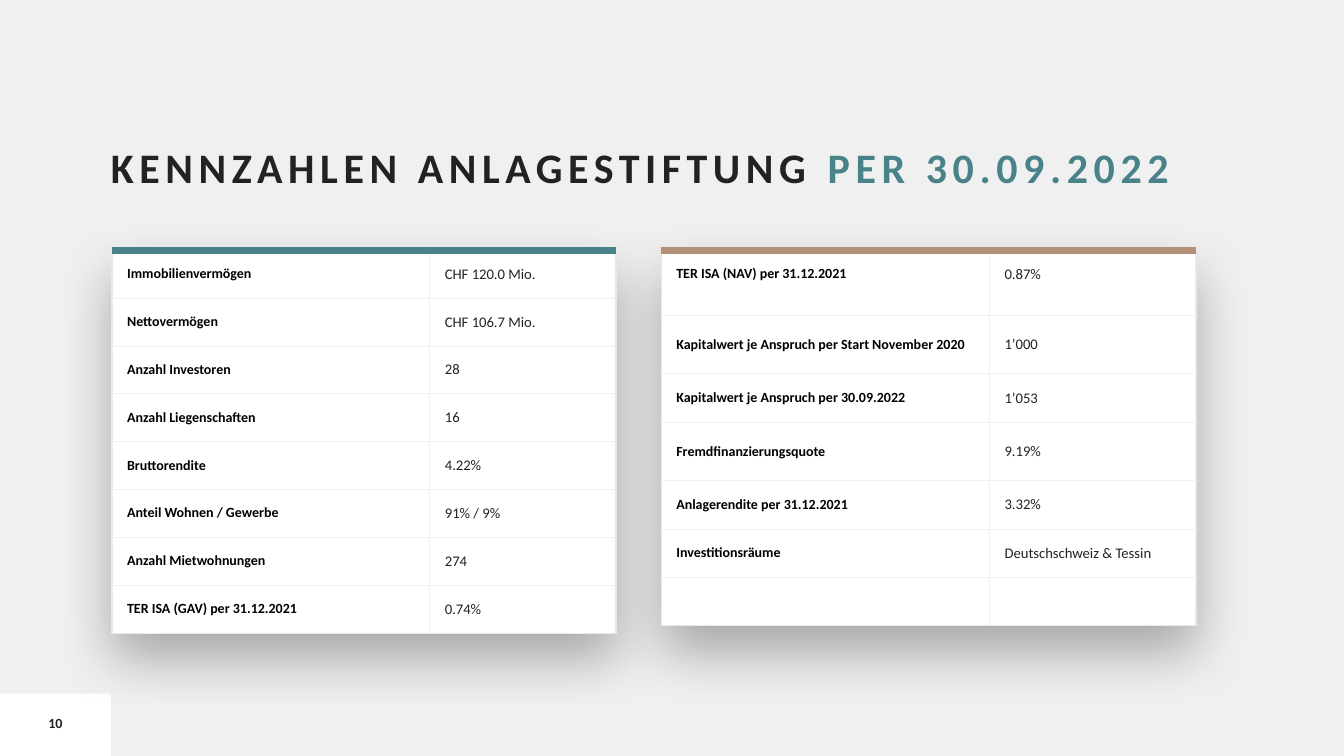
import pptx
import pptx.dml.color
import pptx.enum.shapes
import pptx.enum.text
import pptx.oxml
import pptx.oxml.ns
import pptx.util

Pt = pptx.util.Pt
ALIGN = pptx.enum.text.PP_ALIGN
ANCHOR = pptx.enum.text.MSO_ANCHOR

COLORS = {
    "background": "F0F0F0", "panel": "FFFFFF", "text": "222222", "label": "000000",
    "teal": "498289", "sand": "B39178", "outer": "E9E9E9", "inner": "F0F0F0",
    "shadow": "000000",
}
FONT = "Calibri"
TITLE = [("KENNZAHLEN ANLAGESTIFTUNG", "text"), (" PER 30.09.2022", "teal")]
PAGE = "10"
TABLE_TOP = 178.6
TABLES = [
    {
        "left": 80, "columns": [227, 133], "accent": "teal", "heights": [34.2] * 8,
        "label_anchor": ANCHOR.TOP, "value_anchor": ANCHOR.TOP,
        "rows": [
            ("Immobilienvermögen", "CHF 120.0 Mio."),
            ("Nettovermögen", "CHF 106.7 Mio."),
            ("Anzahl Investoren", "28"),
            ("Anzahl Liegenschaften", "16"),
            ("Bruttorendite", "4.22%"),
            ("Anteil Wohnen / Gewerbe", "91% / 9%"),
            ("Anzahl Mietwohnungen", "274"),
            ("TER ISA (GAV) per 31.12.2021", "0.74%"),
        ],
    },
    {
        "left": 472.3, "columns": [234.5, 147.5], "accent": "sand",
        "heights": [46.8, 41.6, 34.6, 41.6, 34.6, 34.6, 34.6],
        "label_anchor": ANCHOR.MIDDLE, "value_anchor": ANCHOR.MIDDLE,
        "rows": [
            ("TER ISA (NAV) per 31.12.2021", "0.87%"),
            ("Kapitalwert je Anspruch per Start November 2020", "1’000"),
            ("Kapitalwert je Anspruch per 30.09.2022", "1’053"),
            ("Fremdfinanzierungsquote", "9.19%"),
            ("Anlagerendite per 31.12.2021", "3.32%"),
            ("Investitionsräume", "Deutschschweiz & Tessin"),
            ("", ""),
        ],
    },
]


def rgb(name):
    return pptx.dml.color.RGBColor.from_string(COLORS[name])


def xml(text):
    return pptx.oxml.parse_xml(text.replace(">", " " + pptx.oxml.ns.nsdecls("a") + ">", 1))


def add_text(p, text, size=10, color="text", bold=False, spacing=0):
    r = p.add_run()
    r.text = text
    r.font.name = FONT
    r.font.size = Pt(size)
    r.font.bold = bold
    r.font.color.rgb = rgb(color)
    if spacing:
        r.font._element.set("spc", str(spacing * 100))


def set_borders(cell, outer_sides):
    """Draw 1 pt lines on the table's outer sides and 0.5 pt lines elsewhere."""
    tc_pr = cell._tc.get_or_add_tcPr()
    for side in "LRTB":
        name, width = ("outer", 1) if side in outer_sides else ("inner", 0.5)
        tc_pr.append(xml(
            f'<a:ln{side} w="{Pt(width)}"><a:solidFill><a:srgbClr val="{COLORS[name]}"/>'
            f'</a:solidFill></a:ln{side}>'))


def add_shadow(table):
    table._tbl.tblPr.insert(0, xml(
        f'<a:effectLst><a:outerShdw blurRad="{Pt(40)}" dist="{Pt(18)}" dir="5400000" '
        f'rotWithShape="0"><a:srgbClr val="{COLORS["shadow"]}"><a:alpha val="30000"/>'
        '</a:srgbClr></a:outerShdw></a:effectLst>'))


def add_figures(s, spec_table):
    rows, columns = spec_table["rows"], spec_table["columns"]
    heights = spec_table["heights"]
    table = s.shapes.add_table(
        len(rows), len(columns), Pt(spec_table["left"]), Pt(TABLE_TOP),
        Pt(sum(columns)), Pt(sum(heights))).table
    table.first_row = table.horz_banding = False
    add_shadow(table)
    for column, width in zip(table.columns, columns):
        column.width = Pt(width)
    for i, (row, height) in enumerate(zip(rows, heights)):
        table.rows[i].height = Pt(height)
        for j, text in enumerate(row):
            cell = table.cell(i, j)
            sides = "LR"[j] + ("T" if i == 0 else "") + ("B" if i == len(rows) - 1 else "")
            set_borders(cell, sides)
            cell.fill.solid()
            cell.fill.fore_color.rgb = rgb("panel")
            if not text:
                continue
            cell.margin_left = cell.margin_right = Pt(10.8)
            cell.margin_top = cell.margin_bottom = Pt(10.8)
            anchor = spec_table["value_anchor" if j else "label_anchor"]
            cell.vertical_anchor = ANCHOR.TOP if i == 0 else anchor
            p = cell.text_frame.paragraphs[0]
            if j:
                add_text(p, text, size=10.5)
            else:
                add_text(p, text, color="label", bold=True)


def add_accent(s, left, width, color):
    line = s.shapes.add_connector(
        pptx.enum.shapes.MSO_CONNECTOR.STRAIGHT,
        Pt(left), Pt(TABLE_TOP), Pt(left + width), Pt(TABLE_TOP))
    line.line.color.rgb = rgb(color)
    line.line.width = Pt(5)
    line._element.spPr.append(xml("<a:effectLst></a:effectLst>"))


def add_title(s):
    title = s.shapes.title
    title.left, title.top, title.width, title.height = Pt(72), Pt(75), Pt(799), Pt(98.6)
    tf = title.text_frame
    tf.auto_size = pptx.enum.text.MSO_AUTO_SIZE.NONE
    tf.vertical_anchor = ANCHOR.TOP
    tf.margin_top = Pt(32.9)
    p = tf.paragraphs[0]
    p.alignment = ALIGN.LEFT
    p.line_spacing = 0.8
    for text, color in TITLE:
        add_text(p, text, size=30, color=color, bold=True, spacing=4)


def add_page_number(s):
    panel = s.shapes.add_shape(
        pptx.enum.shapes.MSO_SHAPE.RECTANGLE, Pt(0), Pt(495.4), Pt(79.2), Pt(44.6))
    panel.shadow.inherit = False
    panel.fill.solid()
    panel.fill.fore_color.rgb = rgb("panel")
    panel.line.fill.background()
    tf = s.shapes.add_textbox(Pt(0), Pt(502), Pt(79.2), Pt(28.8)).text_frame
    tf.word_wrap = True
    tf.vertical_anchor = ANCHOR.MIDDLE
    p = tf.paragraphs[0]
    p.alignment = ALIGN.CENTER
    add_text(p, PAGE, bold=True)


def main():
    prs = pptx.Presentation()
    prs.slide_width, prs.slide_height = Pt(960), Pt(540)
    s = prs.slides.add_slide(prs.slide_layouts[5])
    s.background.fill.solid()
    s.background.fill.fore_color.rgb = rgb("background")
    add_page_number(s)
    add_title(s)
    for figures in TABLES:
        add_figures(s, figures)
    for figures in TABLES:
        add_accent(s, figures["left"], sum(figures["columns"]), figures["accent"])
    prs.save("out.pptx")


if __name__ == "__main__":
    main()
